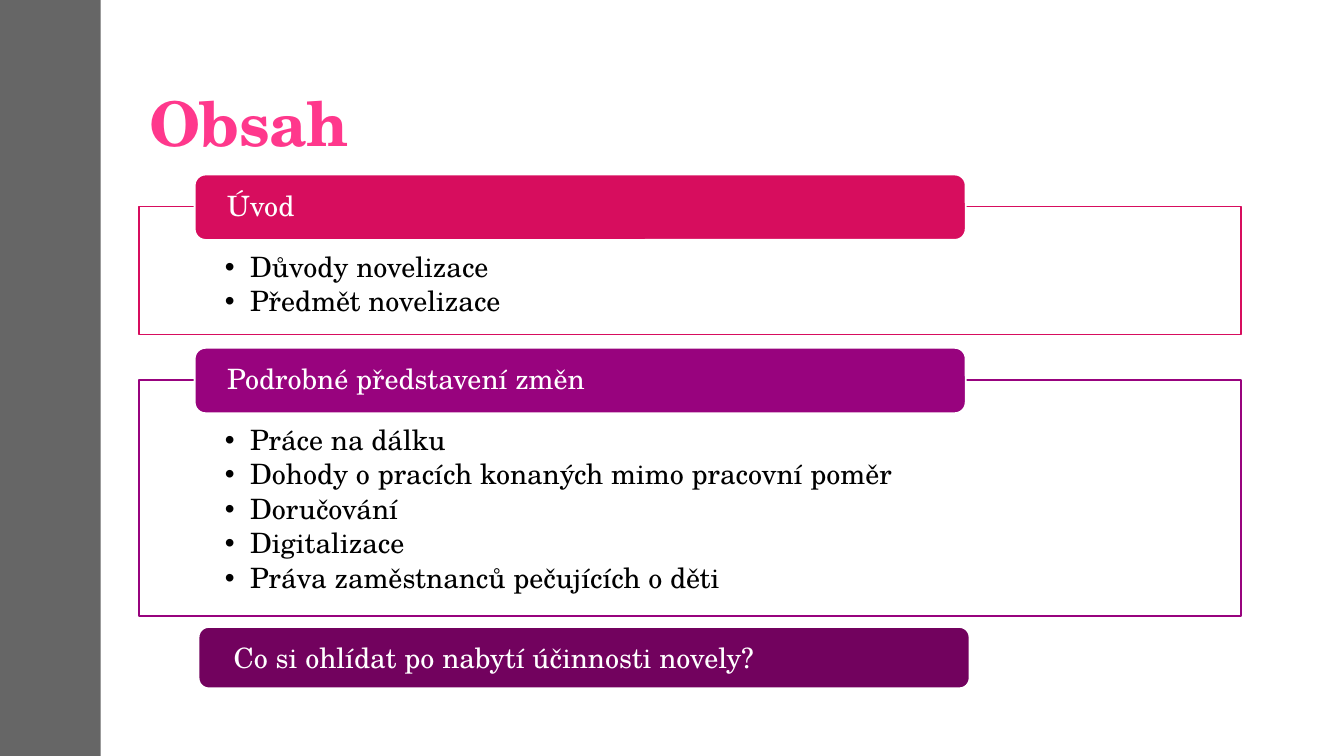
from pptx import Presentation
from pptx.dml.color import RGBColor
from pptx.enum.shapes import MSO_SHAPE as Shape
from pptx.enum.text import MSO_ANCHOR as Anchor, MSO_AUTO_SIZE as AutoSize, PP_ALIGN as Align
from pptx.util import Pt

FONT = "TeX Gyre Schola"
COLORS = {
    "white": "FFFFFF",
    "black": "000000",
    "sidebar": "666666",
    "title": "FF388C",
    "intro": "D70D5E",
    "changes": "98037E",
    "effect": "72025E",
}
FRAME_LEFT, FRAME_WIDTH = 99.4, 787
HEADER_WIDTH, HEADER_RISE = 550.8, 23

SECTIONS = [
    ("intro", 147.6, 91.4, ["Důvody novelizace", "Předmět novelizace"]),
    ("changes", 271.4, 168.5, [
        "Práce na dálku",
        "Dohody o pracích konaných mimo pracovní poměr",
        "Doručování",
        "Digitalizace",
        "Práva zaměstnanců pečujících o děti",
    ]),
]
HEADERS = [
    ("Úvod", "intro", 139, SECTIONS[0][1] - HEADER_RISE, 46.8, 20.9, 0.9),
    ("Podrobné představení změn", "changes", 139, SECTIONS[1][1] - HEADER_RISE, 46.8, 20.9, 0.9),
    ("Co si ohlídat po nabytí účinnosti novely?", "effect", 141.8, 447.8, 43.9, 23, 1),
]


def paint(shape, fill, line=None, width=0):
    shape.fill.solid()
    shape.fill.fore_color.rgb = RGBColor.from_string(COLORS[fill])
    if line:
        shape.line.color.rgb = RGBColor.from_string(COLORS[line])
        shape.line.width = Pt(width)
    else:
        shape.line.fill.background()


def format_text(shape, insets, anchor, size, color, spacing, after=0):
    frame = shape.text_frame
    frame.word_wrap = True
    frame.auto_size = AutoSize.NONE
    frame.vertical_anchor = anchor
    frame.margin_left, frame.margin_top, frame.margin_right, frame.margin_bottom = map(Pt, insets)
    for paragraph in frame.paragraphs:
        paragraph.alignment = Align.LEFT
        paragraph.line_spacing = spacing
        paragraph.space_before = Pt(0)
        paragraph.space_after = Pt(after)
        font = paragraph.runs[0].font
        font.name = FONT
        font.size = Pt(size)
        font.color.rgb = RGBColor.from_string(COLORS[color])


presentation = Presentation()
presentation.slide_width, presentation.slide_height = Pt(960), Pt(540)
slide = presentation.slides.add_slide(presentation.slide_layouts[3])

title, *lists = slide.placeholders
title.left, title.top, title.width, title.height = map(Pt, (FRAME_LEFT, 20.9, FRAME_WIDTH, 97.2))
title.text_frame.text = "Obsah"
format_text(title, (7.2, 2.2, 7.2, 3.6), Anchor.BOTTOM, 44, "title", 0.9)
title_run = title.text_frame.paragraphs[0].runs[0]
title_run.font.bold = True
title_run.font._element.set("spc", "-50")

sidebar = slide.shapes.add_shape(Shape.RECTANGLE, Pt(0), Pt(0), Pt(72), Pt(540))
sidebar.shadow.inherit = False
paint(sidebar, "sidebar")

for body, (color, top, height, items) in zip(lists, SECTIONS):
    body.left, body.top, body.width, body.height = map(Pt, (FRAME_LEFT, top, FRAME_WIDTH, height))
    paint(body, "white", color, 1.1)
    body.text_frame.text = "\n".join(items)
    format_text(body, (61.2, 33.1, 61.2, 11.5), Anchor.TOP, 20, "black", 0.9, 3)
    for paragraph in body.text_frame.paragraphs:
        properties = paragraph._p.get_or_add_pPr()
        properties.set("marL", str(Pt(18)))
        properties.set("indent", str(Pt(-18)))

for text, color, left, top, height, inset, spacing in HEADERS:
    header = slide.shapes.add_shape(
        Shape.ROUNDED_RECTANGLE, Pt(left), Pt(top), Pt(HEADER_WIDTH), Pt(height))
    header.shadow.inherit = False
    paint(header, color, "white", 1.35)
    header.text_frame.text = text
    format_text(header, (inset, 0, inset, 0), Anchor.MIDDLE, 20, "white", spacing)

presentation.save("out.pptx")
